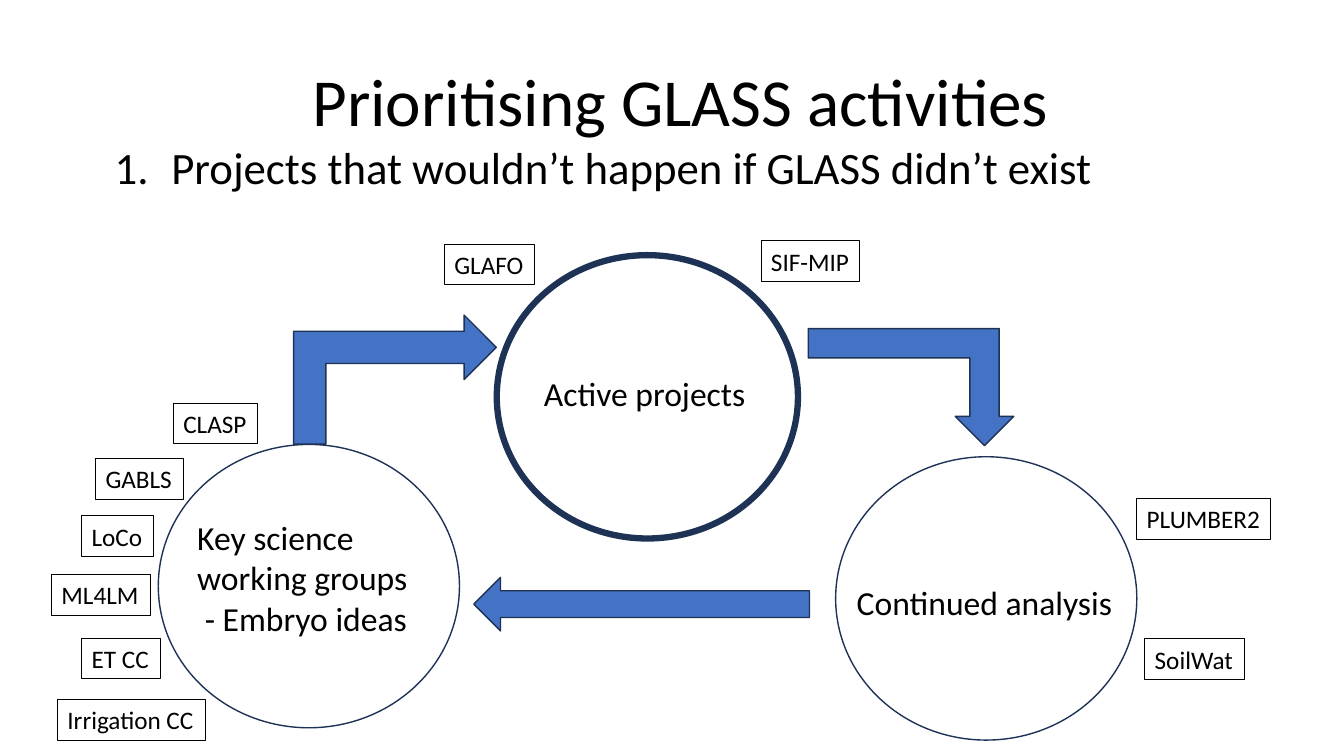
from lxml.etree import SubElement as Sub
from pptx import Presentation
from pptx.dml.color import RGBColor as Rgb
from pptx.enum.shapes import MSO_SHAPE as Kind
from pptx.enum.text import MSO_AUTO_SIZE as Fit, PP_ALIGN as Align
from pptx.oxml.ns import qn
from pptx.util import Cm, Pt

# Content, lengths in cm
COLORS = {"text": "000000", "ring": "1E3256", "arrow": "4472C4"}
TITLE = "Prioritising GLASS activities"
POINT = "Projects that wouldn’t happen if GLASS didn’t exist"
HEAD = (2.64, 1.37, 29.03, 5.05)

# Left, top, line width
RING = (7.59, 7.14)
RINGS = [(3.99, 11.2, 1), (12.52, 6.43, 4.5), (21.06, 11.51, 1)]

# Lines, box, wrap
STAGES = [
    (["Key science working groups", " - Embryo ideas"], (4.72, 12.9, 6.86, 3.33), True),
    (["Active projects"], (13.46, 9.27, 5.64, 1.27), False),
    (["Continued analysis"], (21.34, 14.55, 7.01, 1.27), False),
]

# Kind, box before turning, turn, mirrored
ARROWS = [
    (Kind.BENT_UP_ARROW, (8.33, 7.01, 3.25, 5.11), 90, True),
    (Kind.BENT_UP_ARROW, (20.37, 8.28, 5.18, 2.95), 180, True),
    (Kind.LEFT_ARROW, (11.94, 14.55, 8.46, 1.35), 0, False),
]

# Name, left, top, width
TAG_H = 1.02
TAGS = [
    ("GLAFO", 11.2, 6.15, 2.26),
    ("PLUMBER2", 28.65, 12.57, 3.38),
    ("Irrigation CC", 1.45, 17.63, 3.73),
    ("LoCo", 2.06, 13, 1.8),
    ("SIF-MIP", 19.18, 6.07, 2.49),
    ("ET CC", 2.06, 16.08, 1.98),
    ("GABLS", 2.41, 11.56, 2.21),
    ("ML4LM", 1.3, 14.48, 2.49),
    ("CLASP", 4.37, 10.16, 2.11),
    ("SoilWat", 28.85, 16.1, 2.51),
]


def style(item, **vals):
    for key, val in vals.items():
        setattr(item, key, val)


def color(name):
    return Rgb.from_string(COLORS[name])


def font(para, size):
    style(para.font, name="Calibri", size=Pt(size))
    para.font.color.rgb = color("text")


def edge(shape, name, width):
    shape.line.color.rgb = color(name)
    shape.line.width = Pt(width)


def write(lines, box, size, wrap=False):
    area = slide.shapes.add_textbox(*map(Cm, box))
    frame = area.text_frame
    style(frame, text="\n".join(lines), word_wrap=wrap, auto_size=Fit.SHAPE_TO_FIT_TEXT)
    for para in frame.paragraphs:
        font(para, size)
    return area


def draw(kind, box, width):
    shape = slide.shapes.add_shape(kind, *map(Cm, box))
    shape.shadow.inherit = False
    edge(shape, "ring", width)
    return shape


deck = Presentation()
style(deck, slide_width=Cm(33.87), slide_height=Cm(19.05))
slide = deck.slides.add_slide(deck.slide_layouts[6])

# Title and numbered point
title, point = write([TITLE, POINT], HEAD, 48, True).text_frame.paragraphs
title.alignment = Align.CENTER
props = point._p.get_or_add_pPr()
style_vals = {"marL": Cm(1.43), "indent": -Cm(1.43)}
for key, val in style_vals.items():
    props.set(key, str(val))
number = Sub(props, qn("a:buAutoNum"))
number.set("type", "arabicPeriod")
props.insert(0, number)
font(point, 32)

# Cycle of stages
for left, top, width in RINGS:
    draw(Kind.OVAL, (left, top, *RING), width).fill.background()
for lines, box, wrap in STAGES:
    write(lines, box, 24, wrap)

# Arrows between stages
for kind, box, turn, flip in ARROWS:
    arrow = draw(kind, box, 1)
    arrow.fill.solid()
    arrow.fill.fore_color.rgb = color("arrow")
    arrow.rotation = turn
    if flip:
        arrow._element.spPr.xfrm.set("flipH", "1")

# Project tags
for name, left, top, width in TAGS:
    edge(write([name], (left, top, width, TAG_H), 18), "text", 0.75)

deck.save("out.pptx")
